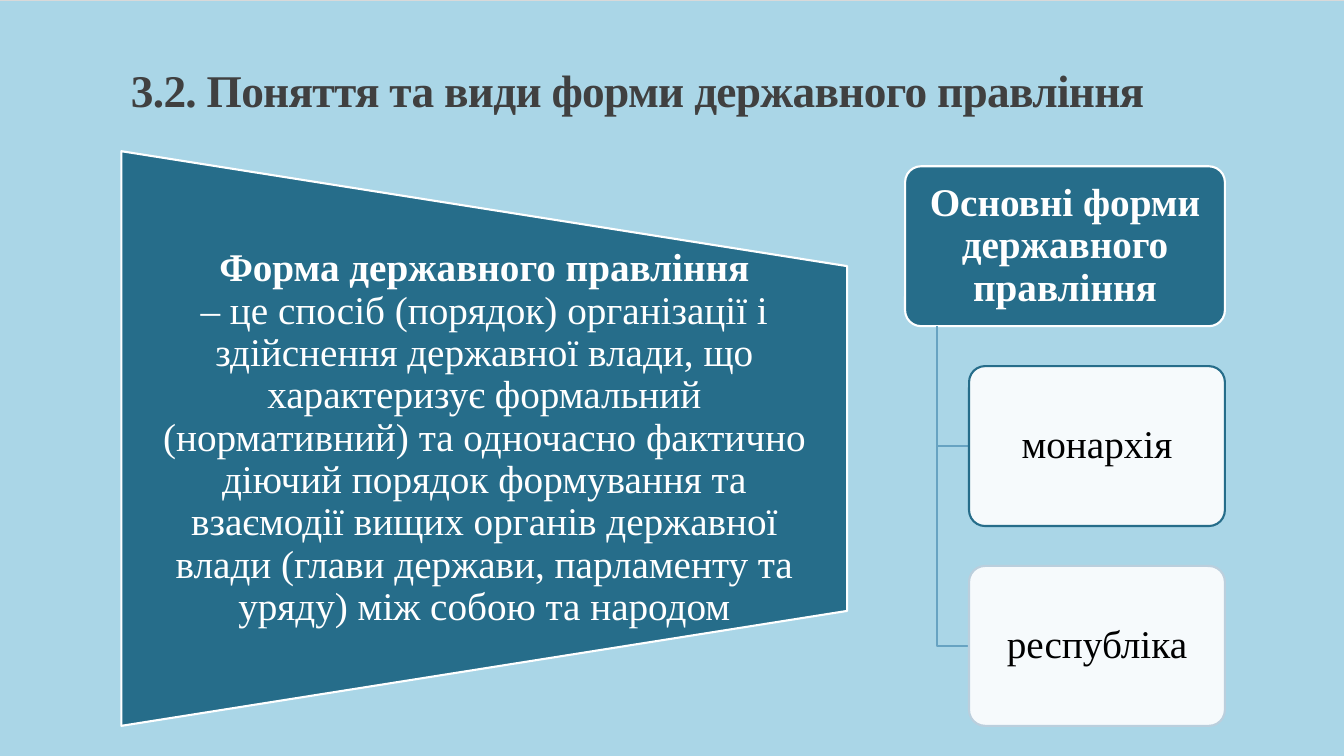
from dataclasses import dataclass

from lxml import etree
from pptx import Presentation
from pptx.dml.color import RGBColor
from pptx.enum.dml import MSO_PATTERN
from pptx.enum.shapes import MSO_SHAPE
from pptx.enum.text import MSO_ANCHOR, MSO_AUTO_SIZE, PP_ALIGN
from pptx.oxml.ns import qn
from pptx.util import Cm, Pt

STRIPES = MSO_PATTERN.DARK_HORIZONTAL
FUNNEL = MSO_SHAPE.FLOWCHART_MANUAL_OPERATION
ROUNDED = MSO_SHAPE.ROUNDED_RECTANGLE
MIDDLE, BOTTOM = MSO_ANCHOR.MIDDLE, MSO_ANCHOR.BOTTOM
LEFT, CENTER = PP_ALIGN.LEFT, PP_ALIGN.CENTER
NO_FIT = MSO_AUTO_SIZE.NONE


@dataclass(frozen=True)
class Theme:
    font: str = "Times New Roman"
    title_size: float = 32.4
    body_size: float = 28
    line_width: float = 1.5
    sky: str = "AAD6E7"
    stripe: str = "D9D9D9"
    heading: str = "404040"
    teal: str = "266D8A"
    branch: str = "67A3C2"
    pale: str = "BBCFDD"
    white: str = "FFFFFF"
    black: str = "000000"


THEME = Theme()


def rgb(code):
    return RGBColor.from_string(code)


def style_run(run, size, color, bold):
    run.font.name = THEME.font
    run.font.size = Pt(size)
    run.font.bold = bold
    run.font.color.rgb = rgb(color)


def style_frame(frame, anchor, align, spacing, margins):
    frame.word_wrap = True
    frame.auto_size = NO_FIT
    frame.vertical_anchor = anchor
    frame.margin_left = frame.margin_right = Cm(margins[0])
    frame.margin_top = frame.margin_bottom = Cm(margins[1])
    frame.paragraphs[0].alignment = align
    frame.paragraphs[0].line_spacing = spacing


def style_outline(shape, color):
    shape.shadow.inherit = False
    shape.line.color.rgb = rgb(color)
    shape.line.width = Pt(THEME.line_width)


def paint(shape, fill, line):
    shape.fill.solid()
    shape.fill.fore_color.rgb = rgb(fill)
    style_outline(shape, line)


def set_opacity(shape, percent):
    color = shape.element.spPr.find(qn("a:solidFill"))[0]
    etree.SubElement(color, qn("a:alpha")).set("val", str(percent * 1000))


def paint_background(slide):
    fill = slide.background.fill
    fill.patterned()
    fill.pattern = STRIPES
    fill.fore_color.rgb = rgb(THEME.sky)
    fill.back_color.rgb = rgb(THEME.stripe)


def add_heading(slide, left, top, width, height, text):
    heading = slide.shapes.title
    heading.left, heading.top = Cm(left), Cm(top)
    heading.width, heading.height = Cm(width), Cm(height)
    frame = heading.text_frame
    frame.text = text
    style_frame(frame, BOTTOM, LEFT, 0.85, (0.25, 0.13))
    run = frame.paragraphs[0].runs[0]
    style_run(run, THEME.title_size, THEME.heading, True)
    heading.element.find(".//" + qn("a:rPr")).set("spc", "-50")


def add_definition(slide, left, top, width, height, term, meaning):
    turn = (width - height) / 2
    funnel = slide.shapes.add_shape(
        FUNNEL, Cm(left + turn), Cm(top - turn), Cm(height), Cm(width))
    funnel.rotation = 270
    paint(funnel, THEME.teal, THEME.white)

    definition = slide.shapes.add_textbox(
        Cm(left), Cm(top + height / 5), Cm(width), Cm(height * 0.6))
    frame = definition.text_frame
    paragraph = frame.paragraphs[0]
    paragraph.text = f"{term}\n{meaning}"
    style_frame(frame, MIDDLE, CENTER, 0.9, (0.65, 0))
    for run, bold in zip(paragraph.runs, (True, False)):
        style_run(run, THEME.body_size, THEME.white, bold)


def add_node(slide, left, top, width, height, text, fill, line, color, bold):
    node = slide.shapes.add_shape(ROUNDED, Cm(left), Cm(top), Cm(width), Cm(height))
    node.adjustments[0] = 0.1
    paint(node, fill, line)
    frame = node.text_frame
    frame.text = text
    style_frame(frame, MIDDLE, CENTER, 0.9, (0.15, 0.1))
    style_run(frame.paragraphs[0].runs[0], THEME.body_size, color, bold)
    return node


def add_branch(slide, trunk, top, tip, middle):
    builder = slide.shapes.build_freeform(Cm(trunk), Cm(top))
    builder.add_line_segments(
        [(Cm(trunk), Cm(middle)), (Cm(tip), Cm(middle))], close=False)
    branch = builder.convert_to_shape()
    branch.fill.background()
    style_outline(branch, THEME.branch)


def add_forms_tree(slide, left, top, width, height, root, forms):
    node_height = height / (1 + 1.25 * len(forms))
    step = node_height * 1.25
    indent = width / 5
    add_node(slide, left, top, width, node_height, root,
             THEME.teal, THEME.white, THEME.white, True)
    for row, (form, outline) in enumerate(forms, 1):
        node_top = top + row * step
        add_branch(slide, left + indent / 2, top + node_height,
                   left + indent, node_top + node_height / 2)
        node = add_node(slide, left + indent, node_top, width - indent, node_height,
                        form, THEME.white, outline, THEME.black, False)
        set_opacity(node, 90)


def main():
    deck = Presentation()
    deck.slide_width, deck.slide_height = Cm(33.87), Cm(19.05)
    slide = deck.slides.add_slide(deck.slide_layouts[5])
    paint_background(slide)
    add_heading(slide, 3.05, 1.24, 27.94, 1.83,
                "3.2. Поняття та види форми державного правління")
    add_definition(
        slide, 3.06, 3.81, 18.29, 14.48,
        "Форма державного правління",
        "– це спосіб (порядок) організації і здійснення державної влади, "
        "що характеризує формальний (нормативний) та одночасно фактично "
        "діючий порядок формування та взаємодії вищих органів державної "
        "влади (глави держави, парламенту та уряду) між собою та народом")
    add_forms_tree(
        slide, 22.81, 4.19, 8.06, 14.1, "Основні форми державного правління",
        [("монархія", THEME.teal), ("республіка", THEME.pale)])
    deck.save("out.pptx")


if __name__ == "__main__":
    main()
